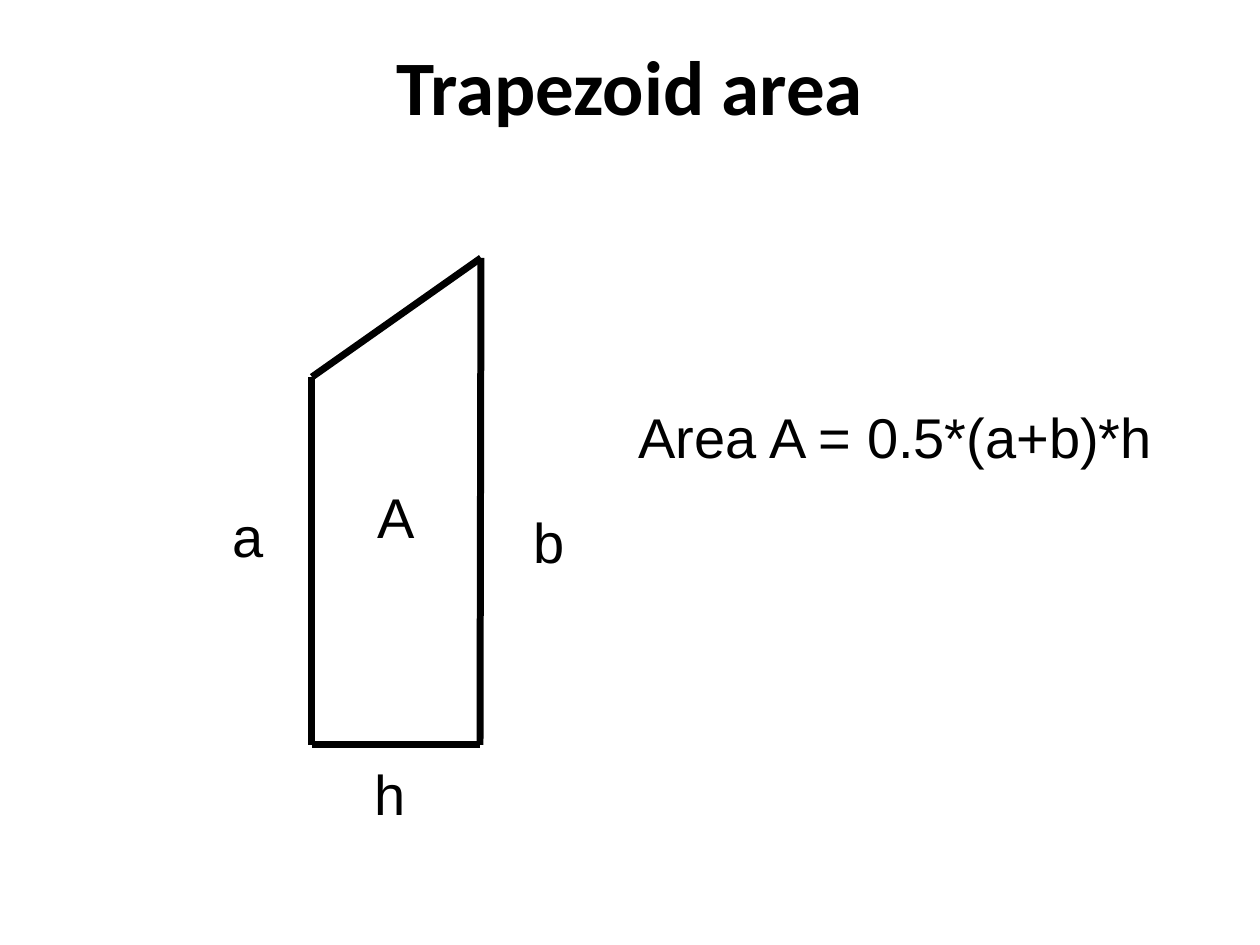
from lxml.etree import SubElement
from pptx import Presentation
from pptx.dml.color import RGBColor
from pptx.enum.shapes import MSO_CONNECTOR
from pptx.enum.text import MSO_ANCHOR, MSO_AUTO_SIZE, PP_ALIGN
from pptx.oxml.ns import qn
from pptx.util import Emu, Pt

COLORS = {"ink": "000000", "paper": "FFFFFF"}
PX_PER_INCH = 126


def px(n):
    return Emu(round(n * 914400 / PX_PER_INCH))


def color(name):
    return RGBColor.from_string(COLORS[name])


def add_text(s, box, text, size=32, font="Arial", bold=False,
             align=PP_ALIGN.LEFT, wrap=True, grow=True):
    sp = s.shapes.add_textbox(*map(px, box))
    tf = sp.text_frame
    tf.text = text
    tf.word_wrap = wrap
    tf.auto_size = MSO_AUTO_SIZE.SHAPE_TO_FIT_TEXT if grow else MSO_AUTO_SIZE.NONE
    tf.vertical_anchor = MSO_ANCHOR.TOP
    p = tf.paragraphs[0]
    p.alignment = align
    r = p.runs[0]
    r.font.size = Pt(size)
    r.font.name = font
    r.font.bold = bold
    r.font.color.rgb = color("ink")


def add_line(s, start, end):
    line = s.shapes.add_connector(MSO_CONNECTOR.STRAIGHT,
                                  *map(px, (*start, *end)))
    line.line.color.rgb = color("ink")
    line.line.width = Pt(4)
    SubElement(line._element.spPr, qn("a:effectLst"))


def add_title(s, box):
    add_text(s, box, "Trapezoid area", size=44, font="Calibri", bold=True,
             align=PP_ALIGN.CENTER, grow=False)


def add_trapezoid(s, box):
    x, y, w, h = box

    # Four sides, corner to corner
    top_left, top_right = (x, y + 119), (x + w, y)
    bottom_left, bottom_right = (x, y + h), (x + w - 1, y + h)
    corners = [bottom_left, top_left, top_right, bottom_right]
    for start, end in zip(corners, corners[1:] + corners[:1]):
        add_line(s, start, end)

    # Labels of the sides and of the area
    labels = [("a", -92, 237, 57), ("b", 209, 243, 57),
              ("h", 50, 495, 57), ("A", 53, 218, 63)]
    for text, dx, dy, width in labels:
        add_text(s, (x + dx, y + dy, width, 79), text, wrap=False)


def add_formula(s, box):
    add_text(s, box, "Area A = 0.5*(a+b)*h")


def main():
    prs = Presentation()
    prs.slide_width, prs.slide_height = px(1260), px(945)
    s = prs.slides.add_slide(prs.slide_layouts[6])
    s.background.fill.solid()
    s.background.fill.fore_color.rgb = color("paper")

    add_trapezoid(s, (312, 258, 169, 487))
    add_formula(s, (626, 396, 571, 81))
    add_title(s, (63, 32, 1134, 158))
    prs.save("out.pptx")


if __name__ == "__main__":
    main()
